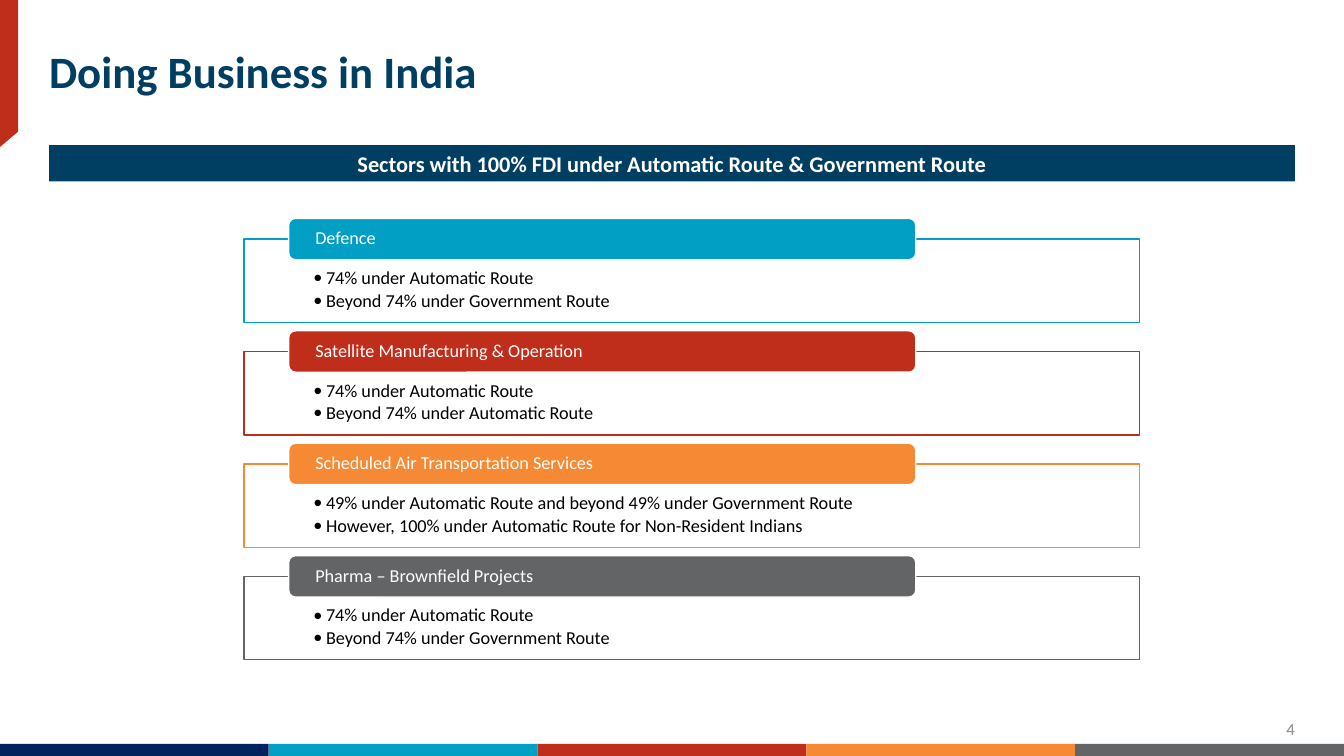
from dataclasses import dataclass

from lxml.etree import SubElement
from pptx import Presentation
from pptx.dml.color import RGBColor
from pptx.enum.shapes import MSO_SHAPE
from pptx.enum.text import MSO_ANCHOR, PP_ALIGN
from pptx.oxml.ns import qn
from pptx.util import Pt


@dataclass(frozen=True)
class Theme:
    font: str = "Calibri"
    navy: str = "003F62"
    midnight: str = "00235D"
    teal: str = "009FC3"
    red: str = "BF2E1A"
    orange: str = "F68933"
    grey: str = "636466"
    pale_grey: str = "8C8C8C"
    white: str = "FFFFFF"
    black: str = "000000"
    title_size: float = 32
    banner_size: float = 16
    body_size: float = 13
    number_size: float = 12


def apply(target, values):
    for name, value in values.items():
        setattr(target, name, value)


class SlideBuilder:
    def __init__(self, slide, theme):
        self.shapes = slide.shapes
        self.theme = theme

    def paint(self, shape, fill, line=None, opacity=None):
        shape.shadow.inherit = False
        shape.fill.solid()
        shape.fill.fore_color.rgb = RGBColor.from_string(fill)
        if opacity is not None:
            color = shape._element.spPr.find(f"{qn('a:solidFill')}/{qn('a:srgbClr')}")
            SubElement(color, qn("a:alpha"), val=str(opacity * 1000))
        if line:
            shape.line.color.rgb = RGBColor.from_string(line)
            shape.line.width = Pt(1)
        else:
            shape.line.fill.background()

    def block(self, box, fill, line=None, opacity=None, kind=MSO_SHAPE.RECTANGLE):
        shape = self.shapes.add_shape(kind, *map(Pt, box))
        self.paint(shape, fill, line, opacity)
        return shape

    def outline(self, points, fill):
        start, *others = points
        builder = self.shapes.build_freeform(*start, scale=Pt(1))
        builder.add_line_segments(others, close=True)
        self.paint(builder.convert_to_shape(), fill)

    def label(self, box):
        return self.shapes.add_textbox(*map(Pt, box))

    def add_text(self, shape, lines, size, color, bold=False, align=PP_ALIGN.LEFT,
                 anchor=MSO_ANCHOR.MIDDLE, insets=(0, 0, 0, 0), spacing=0.9,
                 after=0, bullet=None):
        frame = shape.text_frame
        sides = ("margin_left", "margin_top", "margin_right", "margin_bottom")
        apply(frame, {"word_wrap": True, "vertical_anchor": anchor,
                      **dict(zip(sides, map(Pt, insets)))})
        for index, line in enumerate(lines):
            paragraph = frame.paragraphs[0] if index == 0 else frame.add_paragraph()
            apply(paragraph, {"text": line, "alignment": align,
                              "line_spacing": spacing, "space_after": Pt(after)})
            if bullet:
                properties = paragraph._p.get_or_add_pPr()
                for name, indent in {"marL": Pt(9), "indent": Pt(-9)}.items():
                    properties.set(name, str(int(indent)))
                SubElement(properties, qn("a:buFont"), typeface=self.theme.font)
                SubElement(properties, qn("a:buChar"), char=bullet)
            for run in paragraph.runs:
                apply(run.font, {"name": self.theme.font, "size": Pt(size), "bold": bold})
                run.font.color.rgb = RGBColor.from_string(color)

    def sector(self, top, name, rules, color):
        theme = self.theme
        frame = self.block((174.2, top, 640, 59.6), theme.white, color, opacity=90)
        self.add_text(frame, rules, theme.body_size, theme.black, anchor=MSO_ANCHOR.TOP,
                      insets=(49.7, 21.3, 49.7, 7.2), after=2, bullet="•")
        header = self.block((206.2, top - 14.8, 448, 29.6), color, theme.white,
                            kind=MSO_SHAPE.ROUNDED_RECTANGLE)
        self.add_text(header, [name], theme.body_size, theme.white,
                      insets=(17.6, 0, 17.6, 0))


def main():
    theme = Theme()
    deck = Presentation()
    apply(deck, {"slide_width": Pt(960), "slide_height": Pt(540)})
    page = SlideBuilder(deck.slides.add_slide(deck.slide_layouts[6]), theme)

    # Corner ribbon and footer stripe
    page.outline([(0, 0), (0, 105), (13, 94), (13, 0)], theme.red)
    stripe = [theme.midnight, theme.teal, theme.red, theme.orange, theme.grey]
    width = 960 / len(stripe)
    for index, color in enumerate(stripe):
        page.block((index * width, 531.4, width, 8.6), color)

    # Page number
    page_number = page.label((876, 513.4, 49, 14.4))
    page.add_text(page_number, ["4"], theme.number_size, theme.pale_grey, spacing=1,
                  align=PP_ALIGN.RIGHT, anchor=MSO_ANCHOR.BOTTOM)

    # Title and banner
    title = page.label((35, 35, 757, 35))
    page.add_text(title, ["Doing Business in India"], theme.title_size, theme.navy,
                  bold=True)
    banner = page.block((35, 103.6, 890, 26), theme.navy)
    page.add_text(banner, ["Sectors with 100% FDI under Automatic Route & Government Route"],
                  theme.banner_size, theme.white, bold=True, align=PP_ALIGN.CENTER,
                  spacing=1)

    # Sectors
    sectors = [
        ("Defence", theme.teal,
         ["74% under Automatic Route", "Beyond 74% under Government Route"]),
        ("Satellite Manufacturing & Operation", theme.red,
         ["74% under Automatic Route", "Beyond 74% under Automatic Route"]),
        ("Scheduled Air Transportation Services", theme.orange,
         ["49% under Automatic Route and beyond 49% under Government Route",
          "However, 100% under Automatic Route for Non-Resident Indians"]),
        ("Pharma – Brownfield Projects", theme.grey,
         ["74% under Automatic Route", "Beyond 74% under Government Route"]),
    ]
    for index, (name, color, rules) in enumerate(sectors):
        page.sector(170.8 + index * 80.3, name, rules, color)

    deck.save("out.pptx")


if __name__ == "__main__":
    main()
